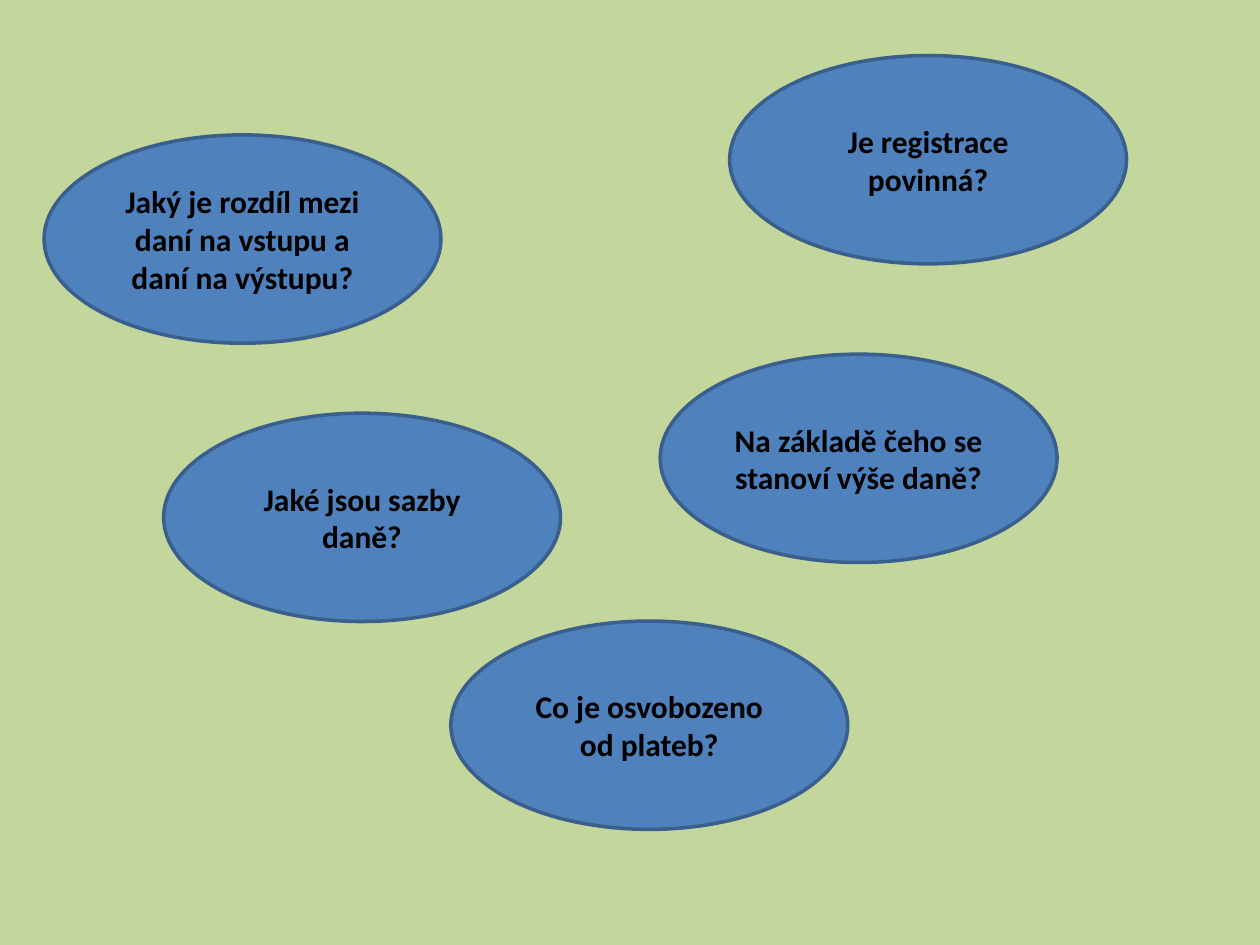
from dataclasses import dataclass

import pptx
import pptx.dml.color
import pptx.enum.shapes
import pptx.enum.text
import pptx.slide
import pptx.util
from pptx.util import Cm


@dataclass(frozen=True)
class Theme:
    background: str = "C3D69B"
    fill: str = "4F81BD"
    outline: str = "3A5F8C"
    text: str = "000000"
    font: str = "Calibri"
    text_size: int = 18
    outline_width: int = 2


@dataclass(frozen=True)
class Question:
    text: str
    left: float
    top: float


THEME = Theme()
BUBBLE_WIDTH, BUBBLE_HEIGHT = Cm(8), Cm(4.2)

QUESTIONS = [
    Question("Jaký je rozdíl mezi daní na vstupu a daní na výstupu?", 0.89, 2.72),
    Question("Je registrace povinná?", 14.71, 1.12),
    Question("Jaké jsou sazby daně?", 3.3, 8.33),
    Question("Co je osvobozeno od plateb?", 9.09, 12.52),
    Question("Na základě čeho se stanoví výše daně?", 13.31, 7.14),
]


def rgb(value: str) -> pptx.dml.color.RGBColor:
    return pptx.dml.color.RGBColor.from_string(value)


def draw_bubble(s: pptx.slide.Slide, question: Question) -> None:
    sp = s.shapes.add_shape(
        pptx.enum.shapes.MSO_SHAPE.OVAL,
        Cm(question.left), Cm(question.top), BUBBLE_WIDTH, BUBBLE_HEIGHT,
    )
    sp.shadow.inherit = False
    sp.fill.solid()
    sp.fill.fore_color.rgb = rgb(THEME.fill)
    sp.line.color.rgb = rgb(THEME.outline)
    sp.line.width = pptx.util.Pt(THEME.outline_width)

    tf = sp.text_frame
    tf.word_wrap = True
    tf.vertical_anchor = pptx.enum.text.MSO_ANCHOR.MIDDLE
    p = tf.paragraphs[0]
    p.text = question.text
    p.alignment = pptx.enum.text.PP_ALIGN.CENTER
    p.font.name = THEME.font
    p.font.size = pptx.util.Pt(THEME.text_size)
    p.font.bold = True
    p.font.color.rgb = rgb(THEME.text)


def main() -> None:
    prs = pptx.Presentation()
    prs.slide_width, prs.slide_height = Cm(25.4), Cm(19.05)
    s = prs.slides.add_slide(prs.slide_layouts[6])
    s.background.fill.solid()
    s.background.fill.fore_color.rgb = rgb(THEME.background)
    for question in QUESTIONS:
        draw_bubble(s, question)
    prs.save("out.pptx")


if __name__ == "__main__":
    main()
